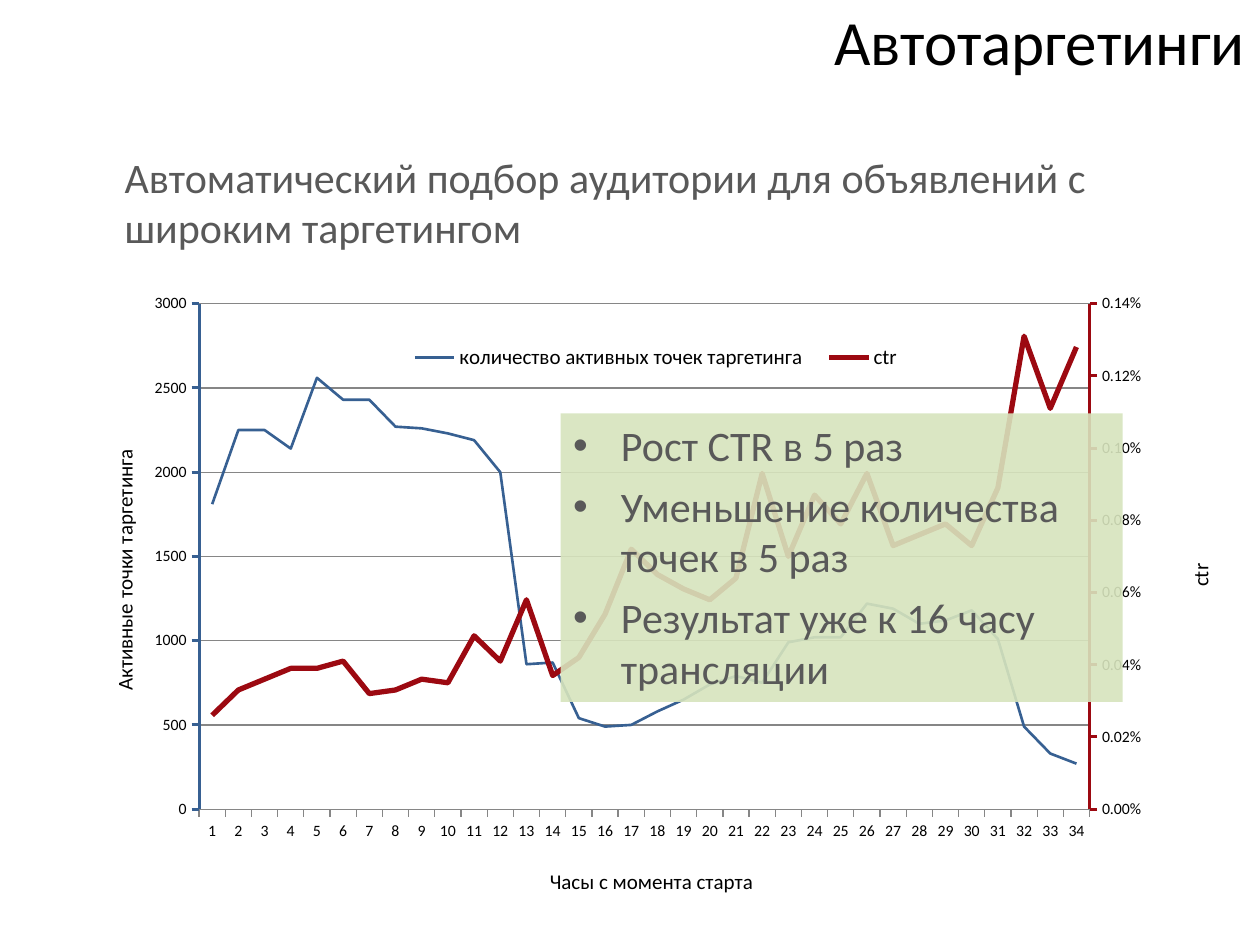
from copy import deepcopy

from lxml import etree
from pptx import Presentation
from pptx import util as u
from pptx.chart.axis import ValueAxis
from pptx.chart.data import CategoryChartData
from pptx.dml.color import RGBColor
from pptx.enum import chart as kinds, shapes, text
from pptx.oxml import parse_xml
from pptx.oxml.ns import nsdecls, qn

GREY, BLACK, BLUE, RED, GREEN = "595959", "000000", "376092", "9C0911", "D7E4BD"
FONT = "Calibri"


def paint(font, size, colour):
    font.name, font.size = FONT, u.Pt(size)
    font.color.rgb = RGBColor.from_string(colour)


def add_layout(element, left, top, width=None, height=None):
    """Place a chart part by shares of the chart's size."""
    for old in element.findall(qn("c:layout")):
        element.remove(old)
    inner = '<c:layoutTarget val="inner"/>' if element.tag == qn("c:plotArea") else ""
    size = f'<c:w val="{width}"/><c:h val="{height}"/>' if width else ""
    layout = parse_xml(
        f'<c:layout {nsdecls("c")}><c:manualLayout>{inner}<c:xMode val="edge"/><c:yMode val="edge"/>'
        f'<c:x val="{left}"/><c:y val="{top}"/>{size}</c:manualLayout></c:layout>')
    before = element.find(qn("c:tx"))
    if before is None:
        before = element.find(qn("c:legendPos"))
    if before is None:
        element.insert(0, layout)
    else:
        before.addnext(layout)


deck = Presentation()
deck.slide_width, deck.slide_height = u.Inches(10), u.Inches(7.5)
page = deck.slides.add_slide(deck.slide_layouts[6])
column, row = deck.slide_width / 100, deck.slide_height / 75

# Each place is left and width in columns, top and height in rows
places = {"intro": (8.9, 11.5, 89.1, 30.7), "title": (36, 0.1, 63.8, 6.2),
          "chart": (5.7, 22.5, 91.8, 53.5), "results": (44.5, 32.8, 44.6, 22.9)}
areas = {name: (int(left * column), int(top * row), int(width * column), int(height * row))
         for name, (left, top, width, height) in places.items()}

# Heading and introduction
for name, words, size, colour, align, anchor in [
        ("intro", "Автоматический подбор аудитории для объявлений с широким таргетингом",
         24, GREY, text.PP_ALIGN.LEFT, text.MSO_ANCHOR.TOP),
        ("title", "Автотаргетинги", 36, BLACK, text.PP_ALIGN.RIGHT, text.MSO_ANCHOR.MIDDLE)]:
    frame = page.shapes.add_textbox(*areas[name]).text_frame
    frame.word_wrap, frame.vertical_anchor = True, anchor
    frame.text = words
    frame.paragraphs[0].alignment = align
    paint(frame.paragraphs[0].runs[0].font, size, colour)

# Line chart of targeting points and click rate by hour
points = [1810, 2250, 2250, 2140, 2560, 2430, 2430, 2270, 2260, 2230, 2190, 2000,
          860, 870, 540, 490, 500, 580, 650, 740, 790, 750, 990, 1020, 1020, 1220,
          1190, 1100, 1120, 1180, 1010, 490, 330, 270]
rate_per_100000 = [26, 33, 36, 39, 39, 41, 32, 33, 36, 35, 48, 41, 58, 37, 42, 54, 72,
                   65, 61, 58, 64, 93, 70, 87, 79, 93, 73, 76, 79, 73, 89, 131, 111, 128]
data = CategoryChartData()
data.categories = [str(hour + 1) for hour in range(len(points))]
data.add_series("количество активных точек таргетинга", points)
data.add_series("ctr", [rate / 100000 for rate in rate_per_100000], "0.00%")
chart = page.shapes.add_chart(kinds.XL_CHART_TYPE.LINE, *areas["chart"], data).chart
paint(chart.font, 10, BLACK)
chart.has_title = False
chart.has_legend = True
chart.legend.position = kinds.XL_LEGEND_POSITION.BOTTOM
chart.legend.include_in_layout = False
paint(chart.legend.font, 12, BLACK)

for series, colour, width in zip(chart.plots[0].series, (BLUE, RED), (1.5, 3)):
    series.smooth = False
    series.marker.style = kinds.XL_MARKER_STYLE.NONE
    series.format.line.width = u.Pt(width)
    series.format.line.color.rgb = RGBColor.from_string(colour)

# The second series moves to its own pair of axes
plot_area = chart.plots[0]._element.getparent()
left_plot = plot_area.find(qn("c:lineChart"))
right_plot = deepcopy(left_plot)
left_plot.remove(left_plot.findall(qn("c:ser"))[1])
right_plot.remove(right_plot.find(qn("c:ser")))
left_plot.addnext(right_plot)
hours, left_value = chart.category_axis, chart.value_axis
right_hours, right_element = deepcopy(hours._element), deepcopy(left_value._element)
left_value._element.addnext(right_element)
right_element.addnext(right_hours)
new_ids = dict(zip([item.get("val") for item in left_plot.findall(qn("c:axId"))], ("5001", "5002")))
for part in (right_plot, right_element, right_hours):
    for item in part.findall(qn("c:axId")) + part.findall(qn("c:crossAx")):
        item.set("val", new_ids[item.get("val")])
right_hours.find(qn("c:delete")).set("val", "1")
right_element.find(qn("c:axPos")).set("val", "r")
right_element.find(qn("c:crosses")).set("val", "max")
right_value = ValueAxis(right_element)

for axis, caption, colour, width, left, top in [
        (hours, "Часы с момента старта", "868686", 0.75, 0.41, 0.86),
        (left_value, "Активные точки таргетинга", BLUE, 1.75, 0.03, 0.24),
        (right_value, "ctr", RED, 1.75, 0.96, 0.41)]:
    axis.major_tick_mark = kinds.XL_TICK_MARK.OUTSIDE
    axis.minor_tick_mark = kinds.XL_TICK_MARK.NONE
    paint(axis.tick_labels.font, 9, BLACK)
    axis.format.line.width = u.Pt(width)
    axis.format.line.color.rgb = RGBColor.from_string(colour)
    frame = axis.axis_title.text_frame
    frame.text = caption
    paint(frame.paragraphs[0].runs[0].font, 12, BLACK)
    frame.paragraphs[0].runs[0].font.bold = False
    if axis is not hours:
        frame._txBody.find(qn("a:bodyPr")).set("rot", "-5400000")
        frame._txBody.find(qn("a:bodyPr")).set("vert", "horz")
    add_layout(axis.axis_title._element, left, top)

for axis, top, step, pattern in [(left_value, 3000, 500, "General"),
                                 (right_value, 0.0014, 0.0002, "0.00%")]:
    axis.minimum_scale, axis.maximum_scale, axis.major_unit = 0, top, step
    axis.tick_labels.number_format = pattern
    axis.tick_labels.number_format_is_linked = False
right_value.has_major_gridlines = False
grid = left_value.major_gridlines.format.line
grid.width, grid.color.rgb = u.Pt(0.75), RGBColor.from_string("868686")
add_layout(plot_area, 0.11, 0.03, 0.77, 0.75)
add_layout(chart.legend._element, 0.28, 0.08, 0.45, 0.06)

# Results panel over the chart
panel = page.shapes.add_shape(shapes.MSO_SHAPE.RECTANGLE, *areas["results"])
panel.shadow.inherit = False
panel.fill.solid()
panel.fill.fore_color.rgb = RGBColor.from_string(GREEN)
fill_colour = panel._element.spPr.find(qn("a:solidFill"))[0]
etree.SubElement(fill_colour, qn("a:alpha")).set("val", "90000")
panel.line.fill.background()
frame = panel.text_frame
frame.word_wrap, frame.vertical_anchor = True, text.MSO_ANCHOR.TOP
frame.text = "\n".join(["Рост CTR в 5 раз", "Уменьшение количества точек в 5 раз",
                        "Результат уже к 16 часу трансляции"])
indent = u.Inches(0.38)
for number, para in enumerate(frame.paragraphs):
    para.alignment = text.PP_ALIGN.LEFT
    para.space_before = u.Pt(6 if number else 0)
    settings = para._p.get_or_add_pPr()
    settings.set("marL", str(indent))
    settings.set("indent", str(-indent))
    etree.SubElement(settings, qn("a:buFont")).set("typeface", "Arial")
    etree.SubElement(settings, qn("a:buChar")).set("char", "•")
    paint(para.runs[0].font, 24, GREY)

deck.save("out.pptx")
